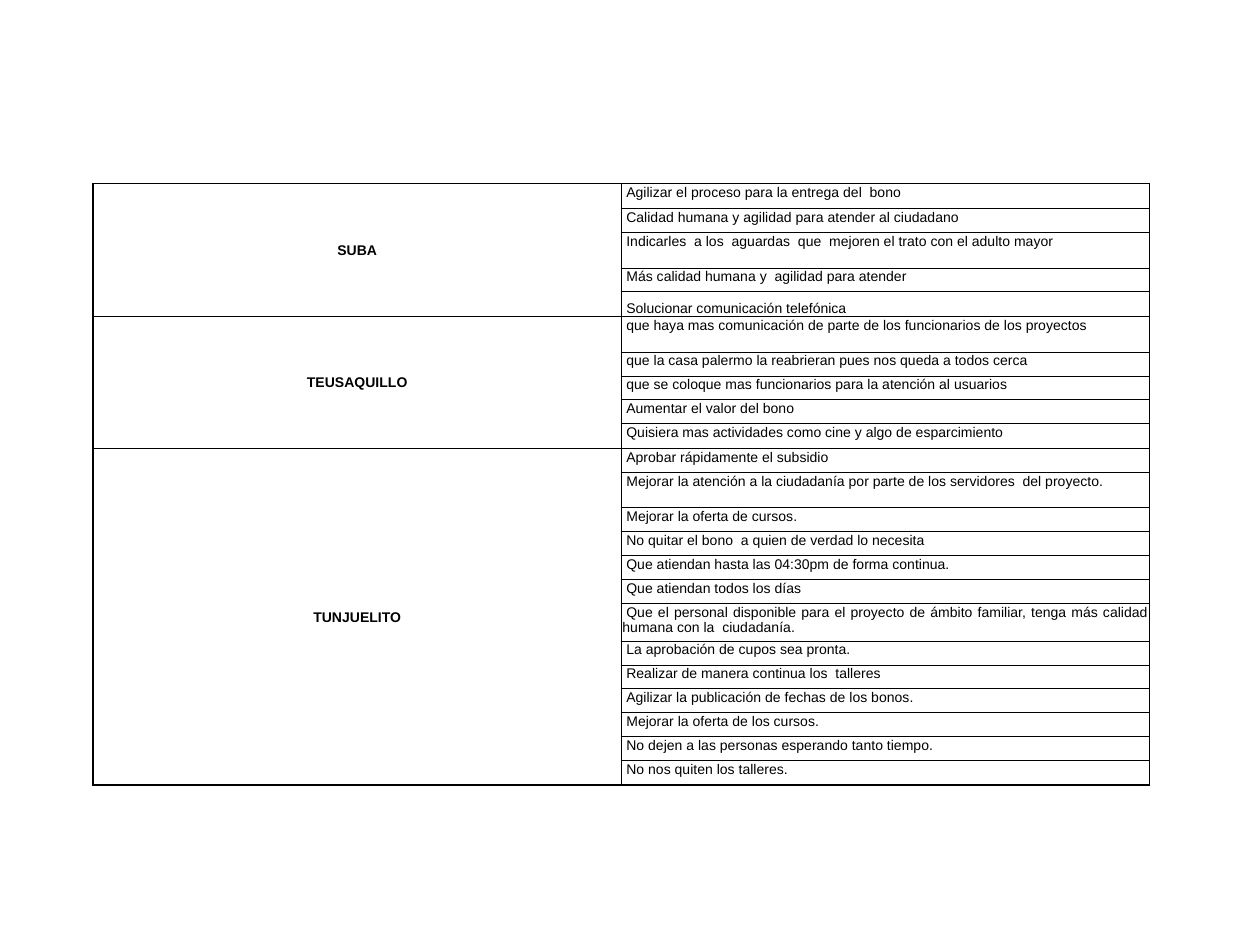
from dataclasses import dataclass

from lxml.etree import SubElement
from pptx import Presentation
from pptx.dml.color import RGBColor
from pptx.enum.text import MSO_ANCHOR as Anchor, PP_ALIGN as Align
from pptx.oxml.ns import qn
from pptx.util import Pt


@dataclass(frozen=True)
class Theme:
    """Colours, type and line sizes of the slide."""
    ink: str = "000000"
    font: str = "Arial"
    size: float = 8
    thick: float = 1
    thin: float = 0.5


THEME = Theme()
ROW, EDGE_ROW, TALL_ROW, WRAPPED_ROW = 13.65, 14.2, 20.3, 21.6

LOCALITIES = {
    "SUBA": [
        ("Agilizar el proceso para la entrega del  bono", EDGE_ROW),
        ("Calidad humana y agilidad para atender al ciudadano", ROW),
        ("Indicarles  a los  aguardas  que  mejoren el trato con el adulto mayor", TALL_ROW),
        ("Más calidad humana y  agilidad para atender", ROW),
        ("Solucionar comunicación telefónica", EDGE_ROW),
    ],
    "TEUSAQUILLO": [
        ("que haya mas comunicación de parte de los funcionarios de los proyectos", TALL_ROW),
        ("que la casa palermo la reabrieran pues nos queda a todos cerca", ROW),
        ("que se coloque mas funcionarios para la atención al usuarios", ROW),
        ("Aumentar el valor del bono", ROW),
        ("Quisiera mas actividades como cine y algo de esparcimiento", EDGE_ROW),
    ],
    "TUNJUELITO": [
        ("Aprobar rápidamente el subsidio", ROW),
        ("Mejorar la atención a la ciudadanía por parte de los servidores  del proyecto.", TALL_ROW),
        ("Mejorar la oferta de cursos.", ROW),
        ("No quitar el bono  a quien de verdad lo necesita", ROW),
        ("Que atiendan hasta las 04:30pm de forma continua.", ROW),
        ("Que atiendan todos los días", ROW),
        ("Que el personal disponible para el proyecto de ámbito familiar, "
         "tenga más calidad humana con la  ciudadanía.", WRAPPED_ROW),
        ("La aprobación de cupos sea pronta.", ROW),
        ("Realizar de manera continua los  talleres", ROW),
        ("Agilizar la publicación de fechas de los bonos.", ROW),
        ("Mejorar la oferta de los cursos.", ROW),
        ("No dejen a las personas esperando tanto tiempo.", ROW),
        ("No nos quiten los talleres.", EDGE_ROW),
    ],
}


def write_text(cell, text, *, bold=False, align=Align.JUSTIFY, anchor=Anchor.TOP, indent=0):
    """Write one formatted paragraph into a cell."""
    cell.vertical_anchor = anchor
    para = cell.text_frame.paragraphs[0]
    para.alignment = align
    para._p.get_or_add_pPr().set("indent", str(Pt(indent)))
    span = para.add_run()
    span.text = text
    span.font.name = THEME.font
    span.font.size = Pt(THEME.size)
    span.font.bold = bold
    span.font.color.rgb = RGBColor.from_string(THEME.ink)


def style_cell(cell, *, top, bottom):
    """Set the margins, borders and empty fill of a cell."""
    cell.margin_left = cell.margin_right = cell.margin_top = Pt(0.6)
    cell.margin_bottom = Pt(0)
    borders = {"L": THEME.thick, "R": THEME.thick, "T": top, "B": bottom}
    for side, width in borders.items():
        line = SubElement(cell._tc.get_or_add_tcPr(), qn(f"a:ln{side}"), w=str(Pt(width)))
        SubElement(SubElement(line, qn("a:solidFill")), qn("a:srgbClr"), val=THEME.ink)
    cell.fill.background()


def add_locality(table, first, name, requests):
    """Fill the rows of one locality and return the next free row."""
    last = first + len(requests) - 1
    for index, (request, height) in enumerate(requests, first):
        table.rows[index].height = Pt(height)
        top = THEME.thick if index == first else THEME.thin
        bottom = THEME.thick if index == last else THEME.thin
        style_cell(table.cell(index, 0), top=THEME.thick, bottom=THEME.thick)
        style_cell(table.cell(index, 1), top=top, bottom=bottom)
        at_foot = name == "SUBA" and index == last
        write_text(table.cell(index, 1), request, indent=2.2,
                   align=Align.LEFT if at_foot else Align.JUSTIFY,
                   anchor=Anchor.BOTTOM if at_foot else Anchor.TOP)
    heading = table.cell(first, 0)
    heading.merge(table.cell(last, 0))
    write_text(heading, name, bold=True, align=Align.CENTER, anchor=Anchor.MIDDLE)
    return last + 1


def add_requests_table(page, left, top, width):
    """Place the table of requests by locality."""
    heights = [height for requests in LOCALITIES.values() for _, height in requests]
    frame = page.shapes.add_table(len(heights), 2, Pt(left), Pt(top), Pt(width), Pt(sum(heights)))
    table = frame.table
    table.first_row = table.horz_banding = False
    row = 0
    for name, requests in LOCALITIES.items():
        row = add_locality(table, row, name, requests)


def main():
    """Build and save the deck."""
    deck = Presentation()
    deck.slide_width, deck.slide_height = Pt(720), Pt(540)
    page = deck.slides.add_slide(deck.slide_layouts[6])
    add_requests_table(page, left=53.2, top=105, width=603.8)
    deck.save("out.pptx")


if __name__ == "__main__":
    main()
